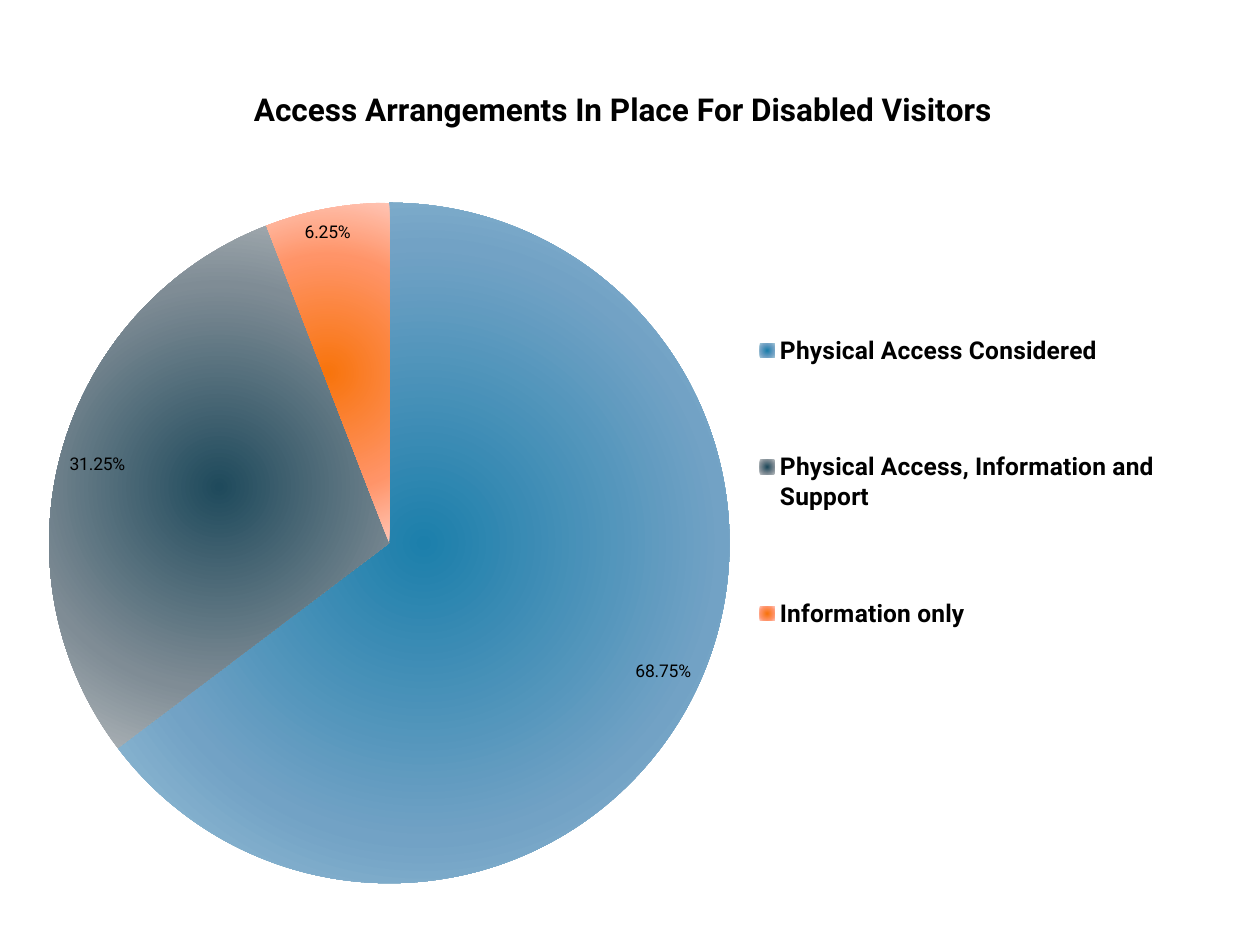
from dataclasses import dataclass

from lxml.etree import _Element as Node
from pptx import Presentation
from pptx.chart.data import CategoryChartData as Data
from pptx.dml.color import RGBColor
from pptx.enum.chart import XL_CHART_TYPE as Kind
from pptx.enum.chart import XL_LABEL_POSITION as Spot
from pptx.enum.chart import XL_LEGEND_POSITION as Side
from pptx.oxml import parse_xml
from pptx.oxml.ns import nsdecls, qn
from pptx.util import Inches, Pt

WIDE, HIGH = Inches(10), Inches(7.5)
FACE = "Roboto"
BLACK = "000000"


@dataclass
class Slice:
    name: str
    share: float
    core: str
    mid: str
    rim: str


SLICES = [
    Slice("Physical Access Considered", 0.6875, "1C7FAB", "72A2C5", "9CC4D8"),
    Slice("Physical Access, Information and Support", 0.3125,
          "1F4A5C", "7F8C95", "B4BABD"),
    Slice("Information only", 0.0625, "F8740C", "FF9468", "FFC4B4"),
]


def tint(code: str) -> RGBColor:
    return RGBColor.from_string(code)


def style(font, size: float, bold: bool = False, color: str = BLACK) -> None:
    font.name, font.size, font.bold = FACE, Pt(size), bold
    font.color.rgb = tint(color)


def write(frame, text: str, **look) -> None:
    run = frame.paragraphs[0].add_run()
    run.text = text
    style(run.font, **look)


def place(part: Node, slot: int, inner: bool = False, **cents: float) -> None:
    for old in part.findall(qn("c:layout")):
        part.remove(old)
    rows = '<c:layoutTarget val="inner"/>' if inner else ""
    rows += "".join(f'<c:{k}Mode val="edge"/>' for k in "xy")
    rows += "".join(f'<c:{k} val="{v / 100:.3f}"/>' for k, v in cents.items())
    part.insert(slot, parse_xml(
        f'<c:layout {nsdecls("c")}><c:manualLayout>{rows}'
        '</c:manualLayout></c:layout>'))


def glow(point, item: Slice, node: Node) -> None:
    point.format.line.fill.background()
    point.format.fill.solid()
    stops = "".join(
        f'<a:gs pos="{pos}000"><a:srgbClr val="{code}"/></a:gs>'
        for pos, code in ((0, item.core), (65, item.mid), (100, item.rim)))
    fill = parse_xml(
        f'<a:gradFill {nsdecls("a")} rotWithShape="1"><a:gsLst>{stops}</a:gsLst>'
        '<a:path path="circle"><a:fillToRect l="50000" t="50000" '
        'r="50000" b="50000"/></a:path></a:gradFill>')
    flat = node.findall(".//" + qn("c:dPt"))[-1].find(
        qn("c:spPr") + "/" + qn("a:solidFill"))
    flat.getparent().replace(flat, fill)


def draw(slide) -> None:
    data = Data(number_format="0.00%")
    data.categories = [item.name for item in SLICES]
    data.add_series("Series 1", [item.share for item in SLICES])
    frame = slide.shapes.add_chart(
        Kind.PIE, Inches(0.21), Inches(0.5), Inches(9.46), Inches(6.72), data)
    chart = frame.chart
    style(chart.font, size=10)

    chart.has_title = True
    title = chart.chart_title
    write(title.text_frame, "Access Arrangements In Place For Disabled Visitors",
          size=18, bold=True)
    place(title._element, 1, x=18.6, y=2.4)

    chart.has_legend = True
    key = chart.legend
    key.position, key.include_in_layout = Side.RIGHT, False
    style(key.font, size=14, bold=True)
    place(key._element, 1, x=59.1, y=22, w=38, h=55)

    plot = chart.plots[0]
    plot.vary_by_categories = True
    place(plot._element.getparent(), 0, inner=True,
          x=1.9, y=16.2, w=57.1, h=81)
    pie = plot.series[0]
    for spot, item in enumerate(SLICES):
        glow(pie.points[spot], item, pie._element)

    tags = pie.data_labels
    tags.show_value = True
    tags.number_format, tags.number_format_is_linked = "0.00%", False
    tags.position = Spot.BEST_FIT
    style(tags.font, size=10)


def main() -> None:
    deck = Presentation()
    deck.slide_width, deck.slide_height = WIDE, HIGH
    draw(deck.slides.add_slide(deck.slide_layouts[6]))
    deck.save("out.pptx")


if __name__ == "__main__":
    main()
